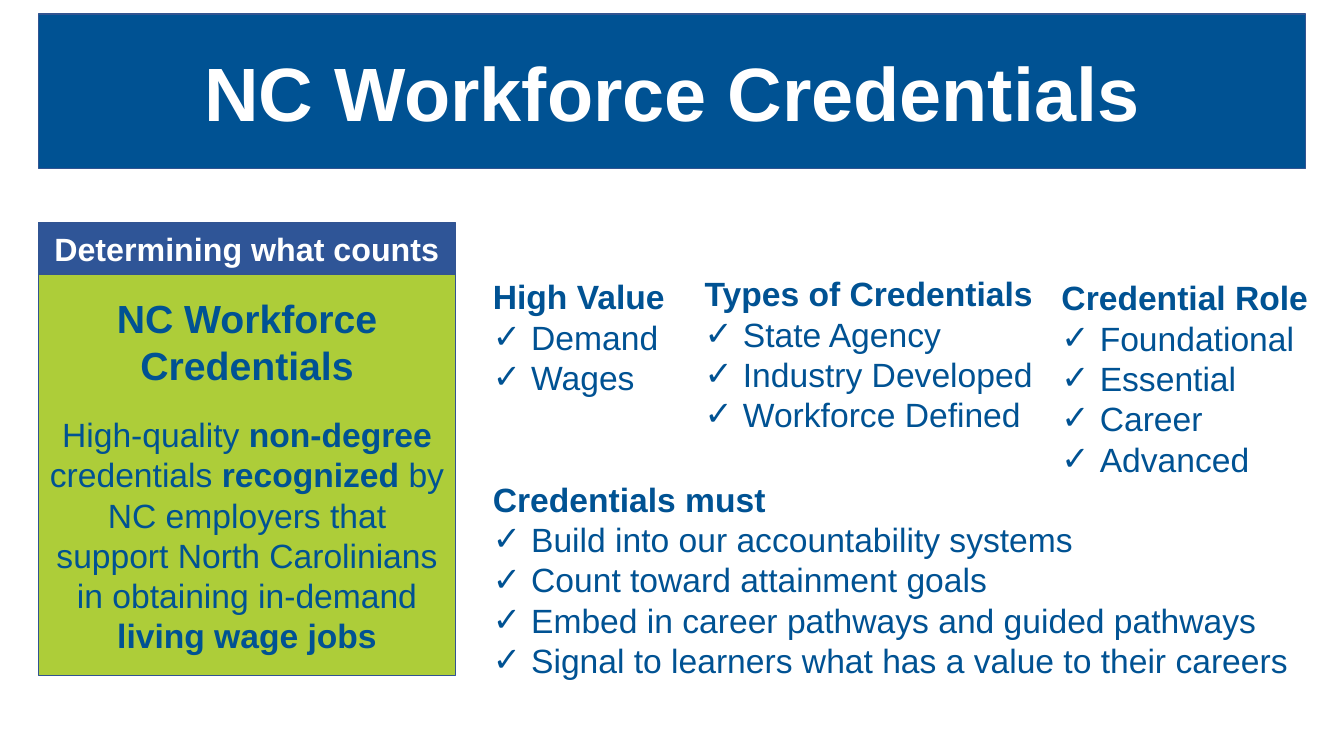
from lxml import etree
from pptx import Presentation
from pptx.dml.color import RGBColor
from pptx.enum.shapes import MSO_SHAPE as Shape
from pptx.enum.text import MSO_ANCHOR as Anchor, MSO_AUTO_SIZE as AutoSize, PP_ALIGN as Align
from pptx.oxml.ns import qn
from pptx.util import Inches, Pt

# Content
BLUE, GREEN, INDIGO, EDGE, WHITE = "005293", "ADCD39", "2F5597", "325491", "FFFFFF"
FONT = "Arial"
TITLE = "NC Workforce Credentials"
PANEL_HEADER = "Determining what counts"
DEFINITION = [  # text, bold
    ("High-quality ", False),
    ("non-degree", True),
    (" credentials ", False),
    ("recognized ", True),
    ("by NC employers that support North Carolinians in obtaining in-demand ", False),
    ("living wage jobs", True),
]
CHECKLISTS = [  # heading, left, top, width, items
    ("High Value", 4.79, 2.69, 1.92, ["Demand", "Wages"]),
    ("Types of Credentials", 6.89, 2.66, 3.49,
     ["State Agency", "Industry Developed", "Workforce Defined"]),
    ("Credential Role", 10.43, 2.7, 2.67,
     ["Foundational", "Essential", "Career", "Advanced"]),
    ("Credentials must", 4.79, 4.7, 8.16,
     ["Build into our accountability systems",
      "Count toward attainment goals",
      "Embed in career pathways and guided pathways",
      "Signal to learners what has a value to their careers"]),
]

# Layout in inches
LEFT, BANNER_WIDTH, PANEL_WIDTH = 0.38, 12.57, 4.14
HEADER_TOP, HEADER_HEIGHT, PANEL_HEIGHT = 2.21, 0.51, 3.98
LINE_HEIGHT, TEXT_MARGINS = 0.4, 0.11
BULLET_INDENT = Inches(0.38)

prs = Presentation()
prs.slide_width, prs.slide_height = Inches(13.33), Inches(7.5)
slide = prs.slides.add_slide(prs.slide_layouts[6])


def rgb(color):
    return RGBColor.from_string(color)


def style(run, size, color, bold):
    run.font.name, run.font.size, run.font.bold = FONT, Pt(size), bold
    run.font.color.rgb = rgb(color)


def add_panel(top, width, height, fill, text, size, color):
    panel = slide.shapes.add_shape(
        Shape.RECTANGLE, Inches(LEFT), Inches(top), Inches(width), Inches(height))
    panel.shadow.inherit = False
    panel.fill.solid()
    panel.fill.fore_color.rgb = rgb(fill)
    panel.line.color.rgb = rgb(EDGE)
    panel.line.width = Pt(1)
    frame = panel.text_frame
    frame.word_wrap, frame.vertical_anchor = True, Anchor.MIDDLE
    frame.text = text
    frame.paragraphs[0].alignment = Align.CENTER
    style(frame.paragraphs[0].runs[0], size, color, True)
    return frame


def add_check(paragraph):
    props = paragraph._p.get_or_add_pPr()
    props.set("marL", str(BULLET_INDENT))
    props.set("indent", str(-BULLET_INDENT))
    etree.SubElement(props, qn("a:buFont")).set("typeface", FONT)
    etree.SubElement(props, qn("a:buChar")).set("char", "✓")


# Title banner
add_panel(0.14, BANNER_WIDTH, 1.53, BLUE, TITLE, 54, WHITE)

# Checklists
for heading, left, top, width, items in CHECKLISTS:
    lines = [heading, *items]
    height = LINE_HEIGHT * len(lines) + TEXT_MARGINS
    box = slide.shapes.add_textbox(Inches(left), Inches(top), Inches(width), Inches(height))
    checklist = box.text_frame
    checklist.word_wrap, checklist.auto_size = False, AutoSize.SHAPE_TO_FIT_TEXT
    checklist.text = "\n".join(lines)
    for index, paragraph in enumerate(checklist.paragraphs):
        style(paragraph.runs[0], 24, BLUE, index == 0)
        if index:
            add_check(paragraph)

# Definition panel with its header
definition = add_panel(HEADER_TOP + HEADER_HEIGHT, PANEL_WIDTH, PANEL_HEIGHT,
                       GREEN, TITLE, 28, BLUE)
definition.paragraphs[0].space_after = Pt(18.4)
sentence = definition.add_paragraph()
sentence.alignment = Align.CENTER
for text, bold in DEFINITION:
    run = sentence.add_run()
    run.text = text
    style(run, 24, BLUE, bold)
add_panel(HEADER_TOP, PANEL_WIDTH, HEADER_HEIGHT, INDIGO, PANEL_HEADER, 23, WHITE)

prs.save("out.pptx")
